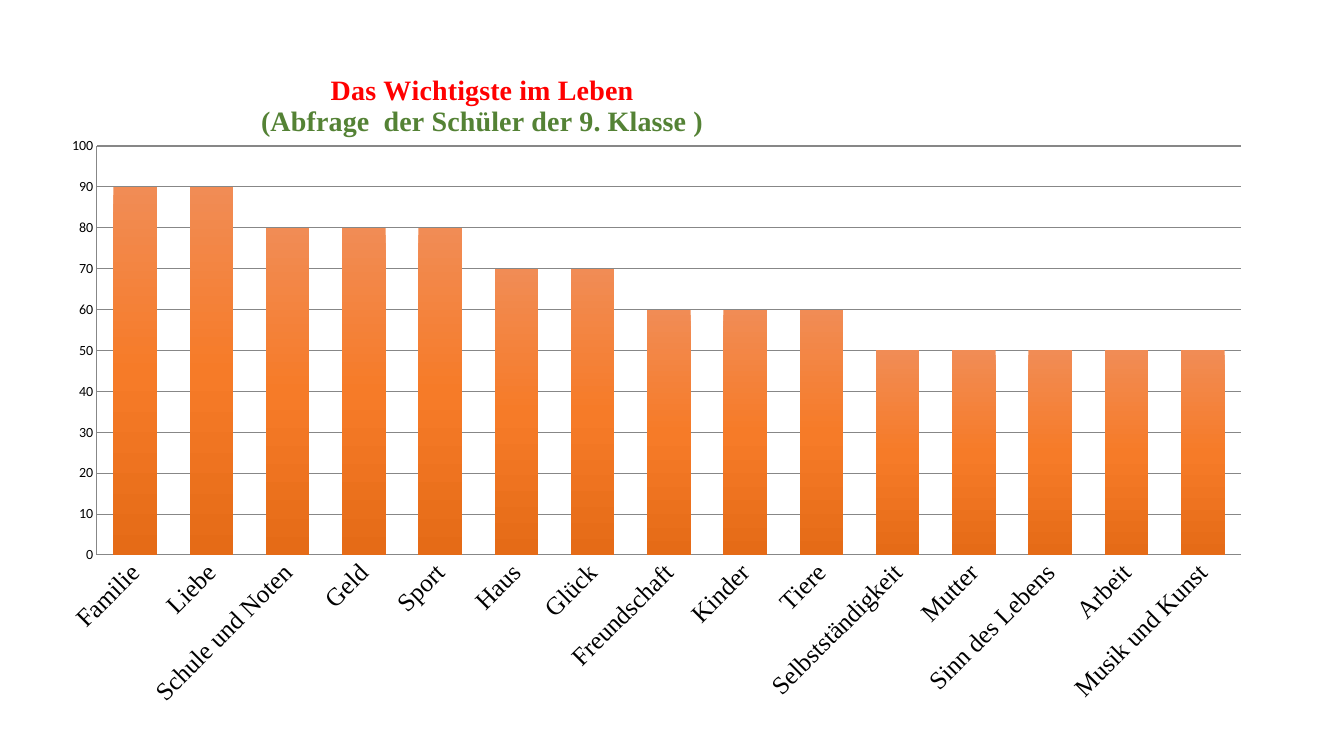
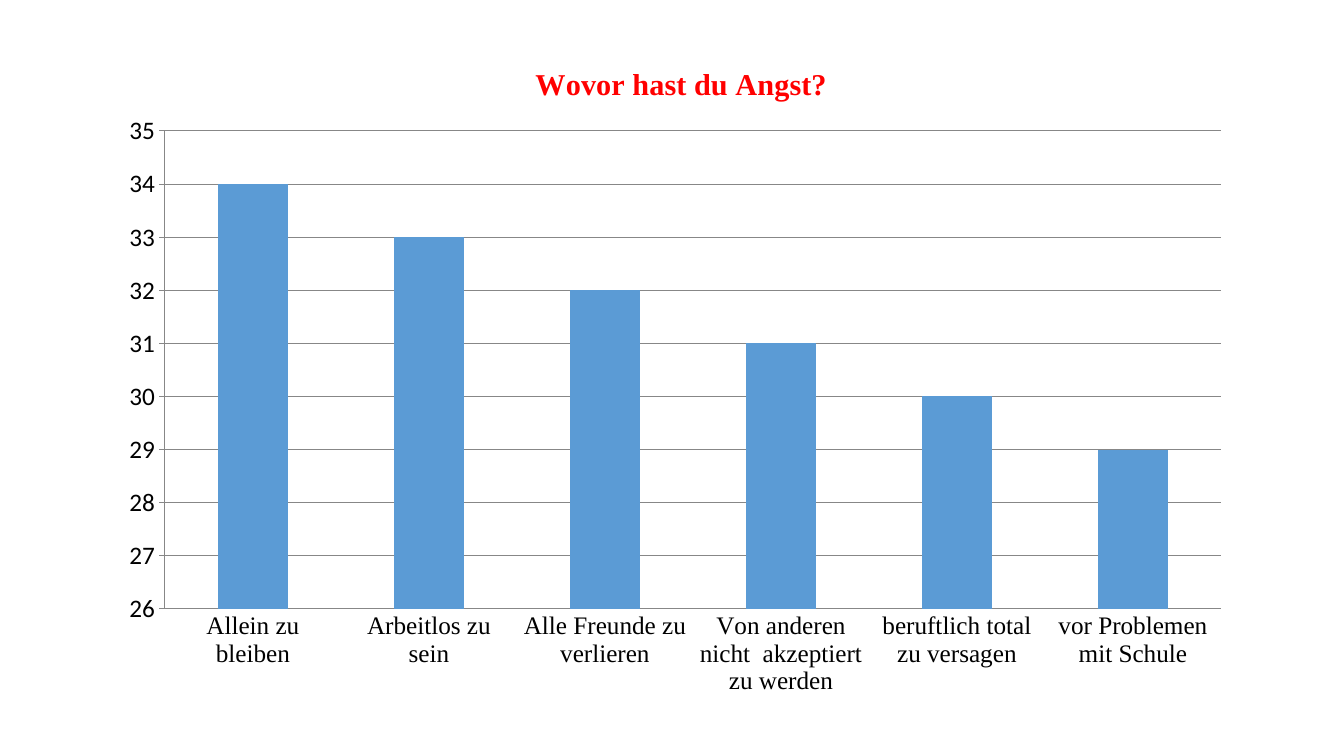
"""Build two slides with column charts of a school survey."""
import copy

from pptx import Presentation
from pptx import util as u
from pptx.chart import data
from pptx.dml import color
from pptx.enum import chart as ch
from pptx.oxml import parse_xml
from pptx.oxml.ns import nsdecls

EMU_PER_PX = 914400 / 100.8
SERIF = "Times New Roman"
RED, GREEN, BLACK, GREY, BLUE = "FF0000", "548235", "000000", "878787", "5B9BD5"
ORANGES = ["F18C55", "F67B28", "E56B17"]


def rgb(hex_string):
    return color.RGBColor.from_string(hex_string)


def place(parent, index, frame, box, target=""):
    left, top, width, height = frame
    shares = {"x": (box[0] - left) / width, "y": (box[1] - top) / height}
    if len(box) == 4:
        shares.update(w=box[2] / width, h=box[3] / height)
    modes = "".join(f'<c:{k}Mode val="edge"/>' for k in "xy")
    sizes = "".join(f'<c:{k} val="{v:.4f}"/>' for k, v in shares.items())
    for old in parent.xpath("c:layout"):
        parent.remove(old)
    parent.insert(index, parse_xml(
        f'<c:layout {nsdecls("c")}><c:manualLayout>{target}{modes}{sizes}'
        "</c:manualLayout></c:layout>"))


SLIDES = [
    dict(frame=(46, 31, 1219, 688), plot=(97, 146, 1144, 409),
         title=[("Das Wichtigste im Leben", RED),
                ("(Abfrage  der Schüler der 9. Klasse )", GREEN)],
         title_at=(258, 70), title_size=20, size=10, gap=75,
         scale=(0, 100, 10), tick=ch.XL_TICK_MARK.NONE, angle=-45, fill=ORANGES,
         cats=["Familie", "Liebe", "Schule und Noten", "Geld", "Sport", "Haus",
               "Glück", "Freundschaft", "Kinder", "Tiere", "Selbstständigkeit",
               "Mutter", "Sinn des Lebens", "Arbeit", "Musik und Kunst"],
         vals=[90] * 2 + [80] * 3 + [70] * 2 + [60] * 3 + [50] * 5),
    dict(frame=(107, 31, 1137, 677), plot=(165, 131, 1056, 478),
         title=[("Wovor hast du Angst?", RED)],
         title_at=(530, 59), title_size=21.6, size=18, gap=150,
         scale=(26, 35, 1), tick=ch.XL_TICK_MARK.OUTSIDE, angle=0, fill=[BLUE],
         cats=["Allein zu bleiben", "Arbeitlos zu sein",
               "Alle Freunde zu verlieren",
               "Von anderen nicht  akzeptiert zu werden",
               "beruftlich total zu versagen", "vor Problemen mit Schule"],
         vals=[34, 33, 32, 31, 30, 29]),
]

prs = Presentation()
prs.slide_width = round(1344 * EMU_PER_PX)
prs.slide_height = round(756 * EMU_PER_PX)

for item in SLIDES:
    s = prs.slides.add_slide(prs.slide_layouts[6])
    chart_data = data.CategoryChartData()
    chart_data.categories = item["cats"]
    chart_data.add_series("Series 1", item["vals"])
    frame = item["frame"]
    chart = s.shapes.add_chart(
        ch.XL_CHART_TYPE.COLUMN_CLUSTERED,
        *[round(n * EMU_PER_PX) for n in frame], chart_data).chart
    chart.has_legend = False
    chart.font.name = "Calibri"
    chart.font.size = u.Pt(item["size"])
    chart.font.color.rgb = rgb(BLACK)

    tf = chart.chart_title.text_frame
    for i, (line, line_color) in enumerate(item["title"]):
        p = tf.add_paragraph() if i else tf.paragraphs[0]
        p.text = line
        p.font.name = SERIF
        p.font.size = u.Pt(item["title_size"])
        p.font.bold = True
        p.font.color.rgb = rgb(line_color)
    chart_xml = chart.element if hasattr(chart, "element") else chart._chartSpace
    place(chart_xml.xpath("c:chart/c:title")[0], 1, frame, item["title_at"])
    place(chart_xml.xpath("c:chart/c:plotArea")[0], 0, frame, item["plot"],
          '<c:layoutTarget val="inner"/>')

    cat_axis, val_axis = chart.category_axis, chart.value_axis
    val_axis.minimum_scale, val_axis.maximum_scale, val_axis.major_unit = item["scale"]
    val_axis.has_major_gridlines = True
    cat_axis.major_tick_mark = ch.XL_TICK_MARK.NONE
    val_axis.major_tick_mark = item["tick"]
    for line in (cat_axis.format.line, val_axis.format.line,
                 val_axis.major_gridlines.format.line):
        line.color.rgb = rgb(GREY)
        line.width = u.Pt(0.75)
    cat_axis.tick_labels.font.name = SERIF
    cat_axis.tick_labels.font.size = u.Pt(18)
    label_body = chart_xml.xpath(".//c:catAx/c:txPr/a:bodyPr")[0]
    label_body.set("rot", str(item["angle"] * 60000))
    label_body.set("vert", "horz")

    plot = chart.plots[0]
    plot.gap_width = item["gap"]
    plot.vary_by_categories = False
    fill = plot.series[0].format.fill
    if len(item["fill"]) == 1:
        fill.solid()
        fill.fore_color.rgb = rgb(item["fill"][0])
    else:
        fill.gradient()
        fill.gradient_angle = 270
        stop_list = chart_xml.xpath(".//c:ser//a:gsLst")[0]
        stop_list.insert(1, copy.deepcopy(stop_list[0]))
        for i, (stop, hex_string) in enumerate(zip(fill.gradient_stops, item["fill"])):
            stop.position = i / 2
            stop.color.rgb = rgb(hex_string)

prs.save("out.pptx")
